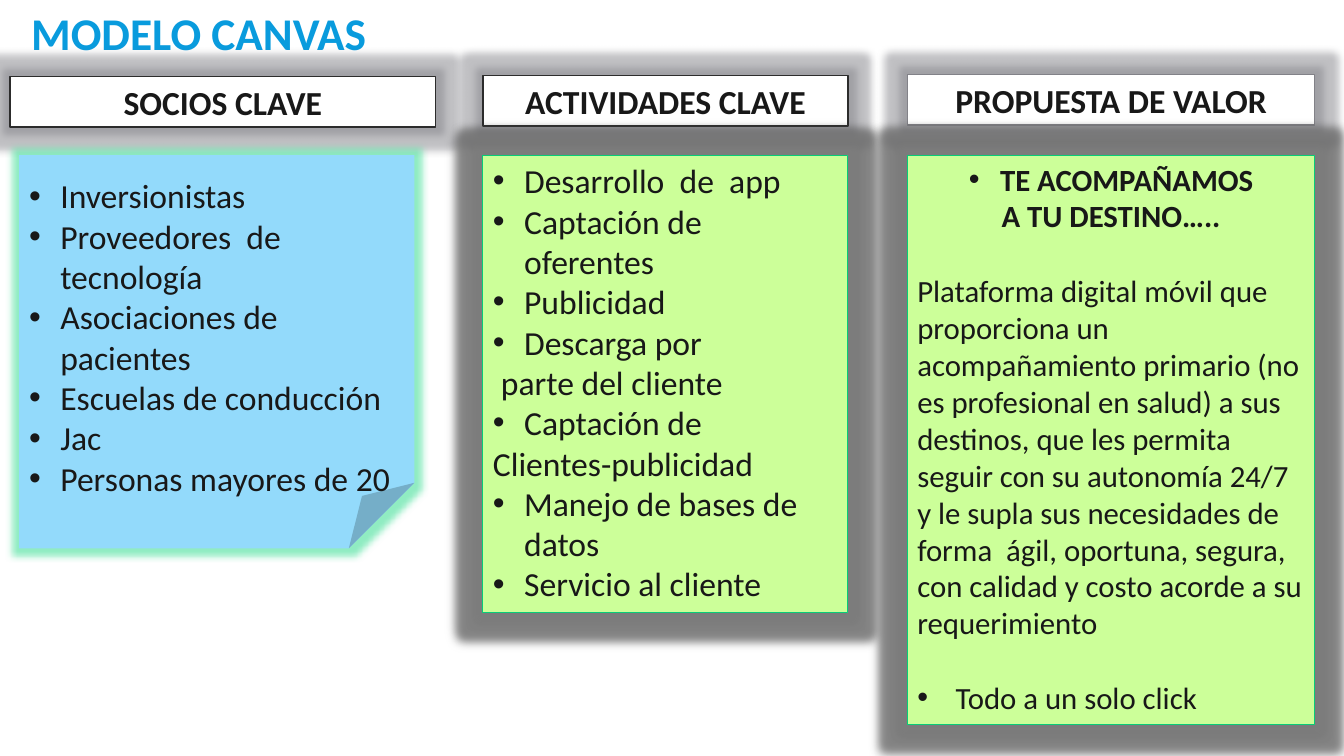
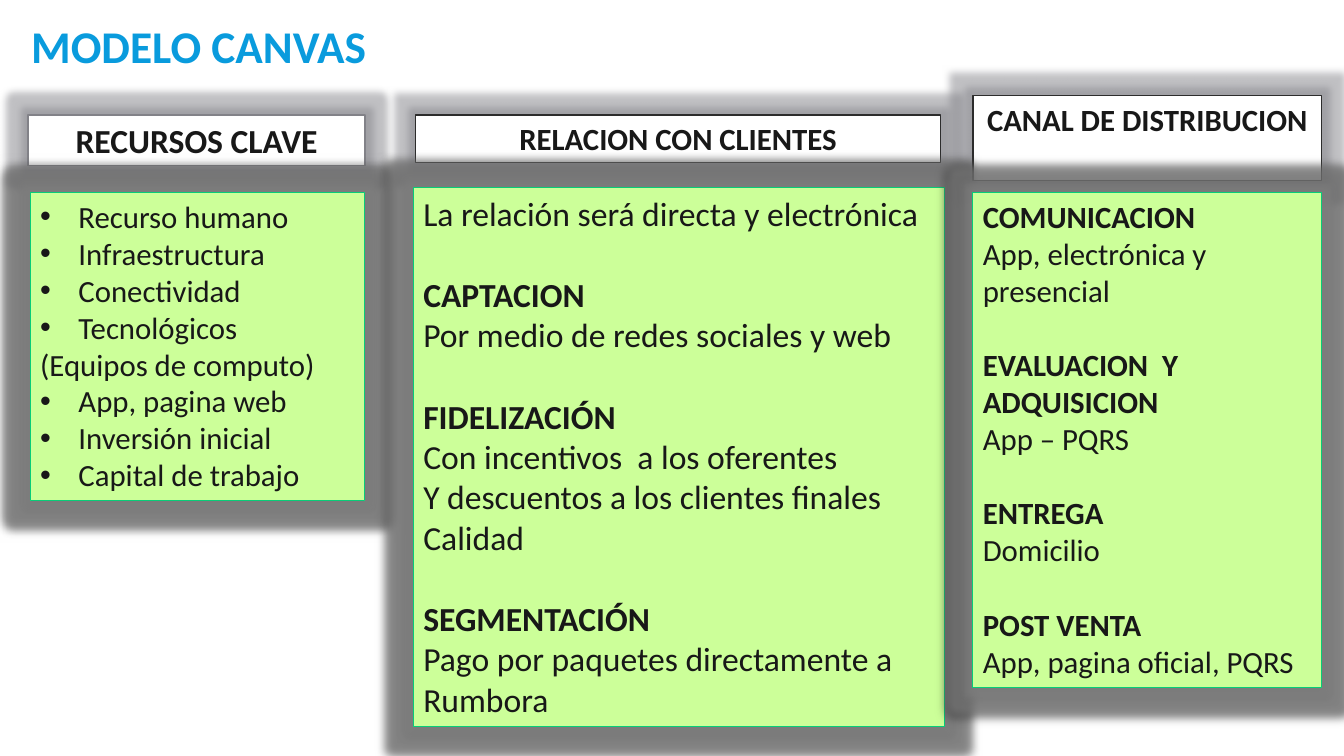
import pptx
import pptx.util
import pptx.dml.color
import pptx.enum.shapes
import pptx.enum.text
import pptx.oxml
import pptx.oxml.ns
from lxml import etree

Inches = pptx.util.Inches
Pt = pptx.util.Pt
SHAPE = pptx.enum.shapes.MSO_SHAPE
ALIGN = pptx.enum.text.PP_ALIGN
ANCHOR = pptx.enum.text.MSO_ANCHOR

FONT = "Calibri"
LINE_HEIGHT = 1.22
COLORS = {
    "title": "099BDD",
    "text": "181818",
    "white": "FFFFFF",
    "dark_line": "2C2C2C",
    "gray_line": "828288",
    "green": "CCFF99",
    "green_line": "08CC78",
    "blue": "93DAFB",
    "header_glow": "828288",
    "body_glow": "808080",
    "note_glow": "46E09A",
    "shadow": "000000",
}


def rgb(name):
    return pptx.dml.color.RGBColor.from_string(COLORS[name])


def add_effect(parent, tag, color, alpha, **attributes):
    effect = etree.SubElement(parent, pptx.oxml.ns.qn(tag), **attributes)
    color_element = etree.SubElement(effect, pptx.oxml.ns.qn("a:srgbClr"), val=COLORS[color])
    etree.SubElement(color_element, pptx.oxml.ns.qn("a:alpha"), val=str(alpha * 1000))


def add_glow(shape, color, alpha, radius, shadow=False):
    shape.shadow.inherit = False
    effects = shape._element.spPr.find(pptx.oxml.ns.qn("a:effectLst"))
    add_effect(effects, "a:glow", color, alpha, rad=str(Inches(radius)))
    if shadow:
        add_effect(effects, "a:outerShdw", "shadow", 68, blurRad=str(Pt(4)),
                   dist=str(Pt(1.2)), dir="5400000", rotWithShape="0")


def write(frame, text, size=24, bold=False, color="text", align=ALIGN.LEFT,
          bullet=False, indent=0, gap=False, spacing=None):
    first = frame.paragraphs[0]
    paragraph = frame.add_paragraph() if first.runs else first
    paragraph.alignment = align
    if spacing:
        paragraph.line_spacing = spacing
    if gap:
        paragraph.space_before = Pt(round(size * LINE_HEIGHT, 1))
    properties = paragraph._p.get_or_add_pPr()
    properties.set("marL", str(Inches(indent)))
    properties.set("indent", str(-Inches(indent) if bullet else 0))
    if bullet:
        etree.SubElement(properties, pptx.oxml.ns.qn("a:buFont"), typeface="Arial")
        etree.SubElement(properties, pptx.oxml.ns.qn("a:buChar"), char="•")
    run = paragraph.add_run()
    run.text = text
    run.font.name = FONT
    run.font.size = Pt(size)
    run.font.bold = bold
    run.font.color.rgb = rgb(color)


def bullet(text, indent=0.31, **options):
    return text, dict(bullet=True, indent=indent, **options)


def wide_bullet(text, **options):
    return bullet(text, indent=0.38, **options)


def plain(text, **options):
    return text, options


def heading(text, gap=True):
    return text, dict(bold=True, gap=gap)


def add_box(slide, box, preset, fill, line=None, line_width=1):
    shape = slide.shapes.add_shape(preset, *map(Inches, box))
    shape.fill.solid()
    shape.fill.fore_color.rgb = rgb(fill)
    if line:
        shape.line.color.rgb = rgb(line)
        shape.line.width = Pt(line_width)
    else:
        shape.line.fill.background()
    shape.text_frame.word_wrap = True
    shape.text_frame.vertical_anchor = ANCHOR.TOP
    return shape


def add_title(slide, top):
    text_box = slide.shapes.add_textbox(Inches(0), Inches(top), Inches(13.33), Inches(0.54))
    frame = text_box.text_frame
    frame.word_wrap = True
    frame.vertical_anchor = ANCHOR.MIDDLE
    frame.margin_left = Inches(0.31)
    write(frame, "MODELO CANVAS", size=32.4, bold=True, color="title", spacing=0.85)


def add_header(slide, box, text, size=24, line="dark_line"):
    shape = add_box(slide, box, SHAPE.RECTANGLE, "white", line)
    add_glow(shape, "header_glow", 50, 0.15)
    write(shape.text_frame, text, size=size, bold=True, align=ALIGN.CENTER)


def add_body(slide, box, lines, size=24):
    shape = add_box(slide, box, SHAPE.RECTANGLE, "green", "green_line", 0.75)
    add_glow(shape, "body_glow", 68, 0.17, shadow=True)
    for text, options in lines:
        write(shape.text_frame, text, size=size, **options)


def add_note(slide, box, lines):
    shape = add_box(slide, box, SHAPE.FOLDED_CORNER, "blue")
    add_glow(shape, "note_glow", 60, 0.14)
    shape.text_frame.margin_top = Inches(0.2)
    for text, options in lines:
        write(shape.text_frame, text, **options)


def build_partners_slide(slide):
    add_title(slide, 0.09)
    add_header(slide, (0.1, 0.76, 4.22, 0.5), "SOCIOS CLAVE")
    add_header(slide, (4.79, 0.75, 3.62, 0.5), "ACTIVIDADES CLAVE")
    add_header(slide, (9, 0.74, 4.04, 0.5), "PROPUESTA DE VALOR", line="gray_line")
    add_note(slide, (0.19, 1.54, 3.92, 3.9), [
        bullet("Inversionistas"),
        bullet("Proveedores  de tecnología"),
        bullet("Asociaciones de pacientes"),
        bullet("Escuelas de conducción"),
        bullet("Jac"),
        bullet("Personas mayores de 20"),
    ])
    add_body(slide, (4.79, 1.54, 3.62, 4.54), [
        bullet("Desarrollo  de  app"),
        bullet("Captación de  oferentes"),
        bullet("Publicidad"),
        bullet("Descarga por"),
        plain("parte del cliente", indent=0.08),
        bullet("Captación de"),
        plain("Clientes-publicidad"),
        bullet("Manejo de bases de datos"),
        bullet("Servicio al cliente"),
    ])
    add_body(slide, (9, 1.54, 4.04, 5.65), [
        bullet("TE ACOMPAÑAMOS", bold=True, align=ALIGN.CENTER),
        plain("A TU DESTINO…..", bold=True, align=ALIGN.CENTER),
        plain("Plataforma digital móvil que proporciona un acompañamiento primario "
              "(no es profesional en salud) a sus destinos, que les permita seguir con "
              "su autonomía 24/7 y le supla sus necesidades de forma  ágil, oportuna, "
              "segura, con calidad y costo acorde a su requerimiento", gap=True),
        wide_bullet("Todo a un solo click", gap=True),
    ], size=22)


def build_resources_slide(slide):
    add_title(slide, 0.22)
    add_header(slide, (0.28, 1.14, 3.34, 0.5), "RECURSOS CLAVE", line="gray_line")
    add_header(slide, (4.12, 1.14, 5.21, 0.47), "RELACION CON CLIENTES", size=22)
    add_header(slide, (9.65, 0.95, 3.46, 0.84), "CANAL DE DISTRIBUCION", size=22)
    add_body(slide, (0.3, 1.91, 3.32, 3.06), [
        wide_bullet("Recurso humano"),
        wide_bullet("Infraestructura"),
        wide_bullet("Conectividad"),
        wide_bullet("Tecnológicos"),
        plain("(Equipos de computo)"),
        wide_bullet("App, pagina web"),
        wide_bullet("Inversión inicial"),
        wide_bullet("Capital de trabajo"),
    ], size=22)
    add_body(slide, (4.1, 1.86, 5.27, 5.35), [
        plain("La relación será directa y electrónica"),
        heading("CAPTACION"),
        plain("Por medio de redes sociales y web"),
        heading("FIDELIZACIÓN"),
        plain("Con incentivos  a los oferentes"),
        plain("Y descuentos a los clientes finales"),
        plain("Calidad"),
        heading("SEGMENTACIÓN"),
        plain("Pago por paquetes directamente a Rumbora"),
    ])
    add_body(slide, (9.65, 1.91, 3.46, 4.91), [
        heading("COMUNICACION", gap=False),
        plain("App, electrónica y presencial"),
        heading("EVALUACION  Y ADQUISICION"),
        plain("App – PQRS"),
        heading("ENTREGA"),
        plain("Domicilio"),
        heading("POST VENTA"),
        plain("App, pagina oficial, PQRS"),
    ], size=22)


def main():
    presentation = pptx.Presentation()
    presentation.slide_width = Inches(13.33)
    presentation.slide_height = Inches(7.5)
    for build in (build_partners_slide, build_resources_slide):
        build(presentation.slides.add_slide(presentation.slide_layouts[6]))
    presentation.save("out.pptx")


if __name__ == "__main__":
    main()
